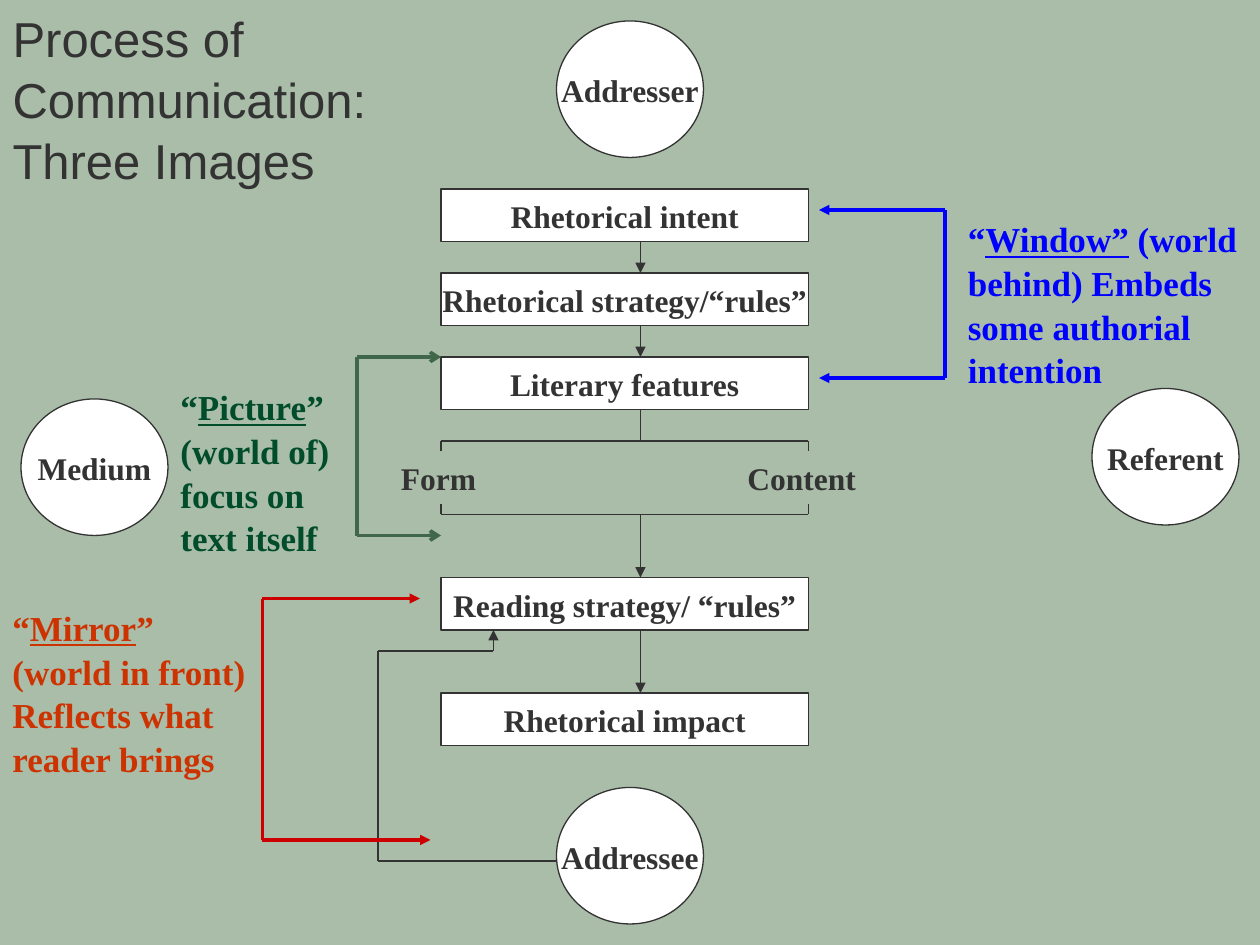
from itertools import pairwise

from lxml.etree import SubElement
from pptx import Presentation
from pptx.dml.color import RGBColor
from pptx.enum.shapes import MSO_CONNECTOR as Connector, MSO_SHAPE as Shape
from pptx.enum.text import MSO_ANCHOR as Anchor, MSO_AUTO_SIZE as AutoSize, PP_ALIGN as Align
from pptx.oxml.ns import qn
from pptx.util import Emu, Pt

INK, PAPER, SAGE = "333333", "FFFFFF", "A9BDA9"
GREEN, BLUE, RED = "41674A", "0000FF", "CC0000"
SERIF, SANS = "Times New Roman", "Arial"
AXIS = 610
BOX_LEFT, BOX_WIDTH, BOX_HEIGHT = 420, 350, 50
BOX_RIGHT = BOX_LEFT + BOX_WIDTH


def px(length):
    """Turn px, 120 to the inch, into EMU."""
    return Emu(length * 7620)


def paint(color_format, color):
    """Set a colour from a hex string."""
    color_format.rgb = RGBColor.from_string(color)


def write(box, spans, size, color=INK, name=SERIF, bold=True, align=Align.LEFT):
    """Write (text, underlined) spans into the first paragraph of a box."""
    para = box.text_frame.paragraphs[0]
    para.alignment = align
    para.line_spacing = 1.04
    para.space_before = Pt(0)
    for text, underlined in spans:
        for number, line in enumerate(text.split("\n")):
            if number:
                para.add_line_break()
            span = para.add_run()
            span.text = line
            font = span.font
            font.name, font.size, font.bold = name, Pt(size), bold
            font.underline = underlined
            paint(font.color, color)


def add_node(page, kind, text, left, top, width, height):
    """Add a white outlined shape with a centred label."""
    node = page.shapes.add_shape(kind, px(left), px(top), px(width), px(height))
    node.shadow.inherit = False
    node.fill.solid()
    paint(node.fill.fore_color, PAPER)
    paint(node.line.color, INK)
    node.line.width = Pt(0.75)
    node.text_frame.word_wrap = False
    node.text_frame.vertical_anchor = Anchor.MIDDLE
    write(node, [(text, False)], 18, align=Align.CENTER)


def add_note(page, spans, left, top, width, height, size=20, color=INK):
    """Add a wrapping text box."""
    note = page.shapes.add_textbox(px(left), px(top), px(width), px(height))
    note.text_frame.word_wrap = True
    note.text_frame.auto_size = AutoSize.SHAPE_TO_FIT_TEXT
    write(note, spans, size, color)


def add_route(page, points, color=INK, width=0.75, head=None, both=False):
    """Join points by straight connectors with a head at the end or at both ends."""
    lines = []
    for start, end in pairwise(points):
        line = page.shapes.add_connector(Connector.STRAIGHT, *map(px, start + end))
        paint(line.line.color, color)
        line.line.width = Pt(width)
        SubElement(line._element.spPr, qn("a:effectLst"))
        lines.append(line)
    if both:
        SubElement(lines[0].line._get_or_add_ln(), qn("a:headEnd"), type=head)
    if head:
        SubElement(lines[-1].line._get_or_add_ln(), qn("a:tailEnd"), type=head)


def add_title(page):
    """Move and format the title placeholder."""
    title = page.shapes.title
    title.left, title.top, title.width, title.height = map(px, (0, 0, 370, 180))
    title.text_frame.word_wrap = True
    title.text_frame.auto_size = AutoSize.NONE
    title.text_frame.vertical_anchor = Anchor.TOP
    write(title, [("Process of Communication:\nThree Images", False)], 28, name=SANS, bold=False)


def add_flow(page):
    """Add the circles, the column of boxes and the lines between them."""
    for text, left, top in (
        ("Addressee", 530, 750),
        ("Referent", 1040, 370),
        ("Medium", 20, 380),
        ("Addresser", 530, 20),
    ):
        add_node(page, Shape.OVAL, text, left, top, 140, 130)
    for text, top in (
        ("Rhetorical intent", 180),
        ("Rhetorical strategy/“rules”", 260),
        ("Literary features", 340),
        ("Reading strategy/ “rules”", 550),
        ("Rhetorical impact", 660),
    ):
        add_node(page, Shape.RECTANGLE, text, BOX_LEFT, top, BOX_WIDTH, BOX_HEIGHT)
    for top, bottom in ((230, 260), (310, 340), (490, 550), (600, 660)):
        add_route(page, [(AXIS, top), (AXIS, bottom)], head="triangle")
    add_route(page, [(AXIS, 390), (AXIS, 420)])
    for bar, tip in ((420, 430), (490, 480)):
        add_route(page, [(BOX_LEFT, tip), (BOX_LEFT, bar), (BOX_RIGHT, bar), (BOX_RIGHT, tip)])
    add_note(page, [("Form", False)], 370, 430, 120, 48, size=18)
    add_note(page, [("Content", False)], 700, 430, 130, 48, size=18)
    feedback = [(530, 820), (360, 820), (360, 620), (470, 620), (470, 600)]
    add_route(page, feedback, head="triangle")


def add_images(page):
    """Add the three coloured brackets and their notes."""
    for points, color, width, head in (
        ([(420, 340), (340, 340), (340, 510), (420, 510)], GREEN, 2, "arrow"),
        ([(780, 200), (900, 200), (900, 360), (780, 360)], BLUE, 1.75, "triangle"),
        ([(400, 570), (250, 570), (250, 800), (410, 800)], RED, 1.75, "triangle"),
    ):
        add_route(page, points, color, width, head, both=True)
    for word, rest, color, left, top, width in (
        ("Picture", "”\n(world of) focus on text itself", "004C2B", 160, 360, 200),
        ("Window”", " (world behind) Embeds some authorial intention", BLUE, 910, 200, 290),
        ("Mirror", "” (world in front)\nReflects what reader brings", "CC3300", 0, 570, 250),
    ):
        spans = [("“", False), (word, True), (rest, False)]
        add_note(page, spans, left, top, width, 172, color=color)


def main():
    """Build and save the slide."""
    deck = Presentation()
    deck.slide_width, deck.slide_height = px(1200), px(900)
    page = deck.slides.add_slide(deck.slide_layouts[5])
    page.background.fill.solid()
    paint(page.background.fill.fore_color, SAGE)
    add_title(page)
    add_flow(page)
    add_images(page)
    deck.save("out.pptx")


if __name__ == "__main__":
    main()
